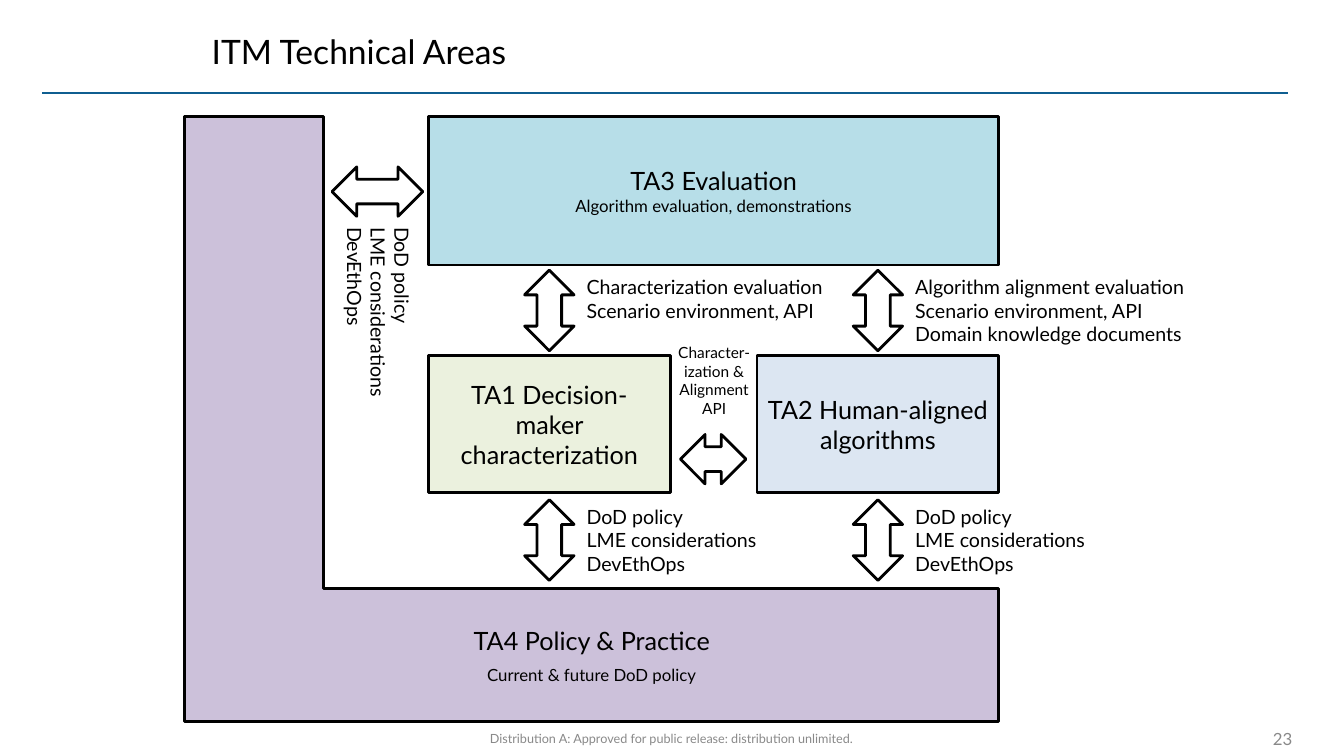
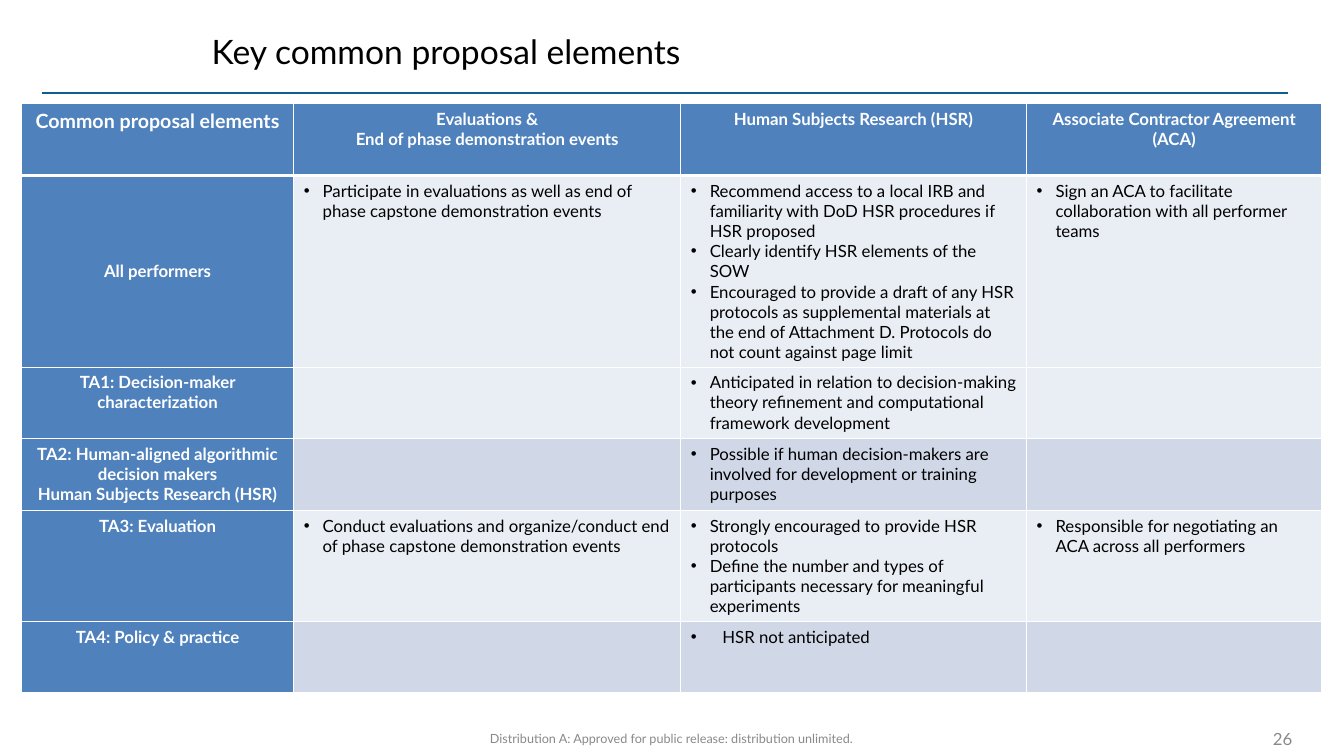
from lxml.etree import SubElement
from pptx import Presentation
from pptx.dml.color import RGBColor
from pptx.enum.shapes import MSO_CONNECTOR, MSO_SHAPE
from pptx.enum.text import MSO_ANCHOR, MSO_AUTO_SIZE, PP_ALIGN
from pptx.oxml.ns import qn
from pptx.util import Pt

BLACK = RGBColor(0x00, 0x00, 0x00)
WHITE = RGBColor(0xFF, 0xFF, 0xFF)
GREY = RGBColor(0x89, 0x89, 0x89)
RULE = RGBColor(0x0F, 0x5E, 0x90)
GREEN = RGBColor(0xEB, 0xF1, 0xDE)
PALE = RGBColor(0xDC, 0xE6, 0xF2)
AQUA = RGBColor(0xB7, 0xDE, 0xE8)
LILAC = RGBColor(0xCC, 0xC1, 0xDA)
HEAD = RGBColor(0x4F, 0x81, 0xBD)
LIGHT = RGBColor(0xE9, 0xED, 0xF4)
BAND = RGBColor(0xD0, 0xD8, 0xE8)

FONT = "Lato"
FOOTER = "Distribution A: Approved for public release: distribution unlimited."
POLICY = "DoD policy\nLME considerations\nDevEthOps"


def add_bullet(para, indent):
    props = para._p.get_or_add_pPr()
    props.set("marL", str(Pt(indent)))
    props.set("indent", str(-Pt(indent)))
    SubElement(props, qn("a:buFont")).set("typeface", "Arial")
    SubElement(props, qn("a:buChar")).set("char", "•")


def write(frame, text, size=14, color=BLACK, bold=False, align=PP_ALIGN.LEFT,
          rest=None, gap=0, bullet=0):
    """Fill a frame, one paragraph a line; rest and gap style the later lines."""
    for i, line in enumerate(text.split("\n")):
        para = frame.add_paragraph() if i else frame.paragraphs[0]
        para.alignment = align
        if i and gap:
            para.space_before = Pt(gap)
        if bullet:
            add_bullet(para, bullet)
        run = para.add_run()
        run.text = line
        font = run.font
        font.name = FONT
        font.size = Pt(rest if i and rest else size)
        font.bold = bold
        font.color.rgb = color


def add_borders(cell, base=1):
    props = cell._tc.get_or_add_tcPr()
    widths = {"a:lnL": 1, "a:lnR": 1, "a:lnT": 1, "a:lnB": base}
    for i, (tag, width) in enumerate(widths.items()):
        line = props.makeelement(qn(tag), {"w": str(Pt(width))})
        fill = SubElement(line, qn("a:solidFill"))
        SubElement(fill, qn("a:srgbClr")).set("val", str(WHITE))
        props.insert(i, line)


class Deck:
    """Holds the shared style and the current slide; lengths are in points."""

    def __init__(self):
        self.prs = Presentation()
        self.prs.slide_width, self.prs.slide_height = Pt(960), Pt(540)
        self.slide = None

    def start(self, title, number):
        self.slide = self.prs.slides.add_slide(self.prs.slide_layouts[5])
        head = self.slide.shapes.title
        head.left, head.top, head.width, head.height = map(Pt, (144, 12.2, 776, 48.2))
        head.text_frame.auto_size = MSO_AUTO_SIZE.NONE
        head.text_frame.vertical_anchor = MSO_ANCHOR.MIDDLE
        write(head.text_frame, title, size=24)
        self.rule(30.2, 920.2, 66.5)
        self.label((139.7, 515.5, 679.7, 23.8), FOOTER, anchor=MSO_ANCHOR.MIDDLE,
                   size=9, color=GREY, align=PP_ALIGN.CENTER)
        self.label((850.3, 516.2, 79.9, 23), str(number), anchor=MSO_ANCHOR.MIDDLE,
                   size=12, color=GREY, align=PP_ALIGN.RIGHT)

    def rule(self, left, right, top):
        line = self.slide.shapes.add_connector(
            MSO_CONNECTOR.STRAIGHT, Pt(left), Pt(top), Pt(right), Pt(top))
        line.line.color.rgb = RULE
        line.line.width = Pt(1.75)
        SubElement(line._element.spPr, qn("a:effectLst"))

    def label(self, place, text, turn=0, anchor=MSO_ANCHOR.TOP, **style):
        box = self.slide.shapes.add_textbox(*map(Pt, place))
        box.rotation = turn
        box.text_frame.word_wrap = True
        box.text_frame.vertical_anchor = anchor
        write(box.text_frame, text, **style)

    def shape(self, kind, place, fill=WHITE, text="", adjust=(), **style):
        shape = self.slide.shapes.add_shape(kind, *map(Pt, place))
        shape.shadow.inherit = False
        shape.fill.solid()
        shape.fill.fore_color.rgb = fill
        shape.line.color.rgb = BLACK
        shape.line.width = Pt(2)
        for i, value in enumerate(adjust):
            shape.adjustments[i] = value
        if text:
            shape.text_frame.word_wrap = True
            shape.text_frame.vertical_anchor = MSO_ANCHOR.MIDDLE
            write(shape.text_frame, text, size=18, align=PP_ALIGN.CENTER, **style)

    def table(self, left, top, widths, heights, rows, fills):
        """Draw a table whose first row and column are headings."""
        table = self.slide.shapes.add_table(
            len(rows), len(widths), Pt(left), Pt(top),
            Pt(sum(widths)), Pt(sum(heights))).table
        table.horz_banding = False
        for col, width in zip(table.columns, widths):
            col.width = Pt(width)
        for r, (row, height) in enumerate(zip(rows, heights)):
            table.rows[r].height = Pt(height)
            for c, text in enumerate(row):
                cell = table.cell(r, c)
                heading = r == 0 or c == 0
                cell.fill.solid()
                cell.fill.fore_color.rgb = HEAD if heading else fills[r]
                add_borders(cell, base=1 if r else 3)
                if heading:
                    write(cell.text_frame, text, size=12 if r or c else 14,
                          color=WHITE, bold=True, align=PP_ALIGN.CENTER)
                elif text:
                    last = r == len(rows) - 1
                    write(cell.text_frame, text, size=12, bullet=22.5 if last else 13.5)
        return table


def draw_areas(deck):
    deck.start("ITM Technical Areas", 23)
    wide, arrow, tall = 172.8, 35.3, 57.6
    areas = (
        (306, "TA1 Decision-maker characterization", GREEN,
         "Characterization evaluation\nScenario environment, API"),
        (540.7, "TA2 Human-aligned algorithms", PALE,
         "Algorithm alignment evaluation\nScenario environment, API\n"
         "Domain knowledge documents"),
    )
    deck.shape(MSO_SHAPE.CORNER, (131.8, 83.5, 581.7, 432), LILAC,
               "TA4 Policy & Practice\nCurrent & future DoD policy",
               adjust=(0.22, 0.23), rest=12, gap=6)
    deck.shape(MSO_SHAPE.RECTANGLE, (306, 83.5, 407.5, 105.8), AQUA,
               "TA3 Evaluation\nAlgorithm evaluation, demonstrations", rest=12)
    for left, name, fill, above in areas:
        deck.shape(MSO_SHAPE.RECTANGLE, (left, 254.2, wide, 97.9), fill, name)
        for top, note in ((193, above), (357, POLICY)):
            deck.shape(MSO_SHAPE.UP_DOWN_ARROW,
                       (left + (wide - arrow) / 2, top, arrow, tall))
            deck.label((left + 105.9, top, 227.5, 58.3), note)
    for left, top, width in ((237.2, 119.2, 64.8), (486, 310.3, 46.8)):
        deck.shape(MSO_SHAPE.LEFT_RIGHT_ARROW, (left, top, width, arrow))
    deck.label((475.9, 241.9, 68.4, 60.5), "Character-ization & Alignment API",
               size=11, align=PP_ALIGN.CENTER)
    deck.label((187.2, 192.2, 149, 74.9), POLICY, turn=90)


def draw_table(deck):
    deck.start("Key common proposal elements", 26)
    rows = (
        ("Common proposal elements",
         "Evaluations &\nEnd of phase demonstration events",
         "Human Subjects Research (HSR)",
         "Associate Contractor Agreement (ACA)"),
        ("All performers",
         "Participate in evaluations as well as end of phase capstone "
         "demonstration events",
         "Recommend access to a local IRB and familiarity with DoD HSR "
         "procedures if HSR proposed\n"
         "Clearly identify HSR elements of the SOW\n"
         "Encouraged to provide a draft of any HSR protocols as supplemental "
         "materials at the end of Attachment D. Protocols do not count "
         "against page limit",
         "Sign an ACA to facilitate collaboration with all performer teams"),
        ("TA1: Decision-maker characterization", "",
         "Anticipated in relation to decision-making theory refinement and "
         "computational framework development", ""),
        ("TA2: Human-aligned algorithmic decision makers\n"
         "Human Subjects Research (HSR)", "",
         "Possible if human decision-makers are involved for development or "
         "training purposes", ""),
        ("TA3: Evaluation",
         "Conduct evaluations and organize/conduct end of phase capstone "
         "demonstration events",
         "Strongly encouraged to provide HSR protocols\n"
         "Define the number and types of participants necessary for "
         "meaningful experiments",
         "Responsible for negotiating an ACA across all performers"),
        ("TA4: Policy & practice", "", "HSR not anticipated", ""),
    )
    table = deck.table(15.4, 74.2, (194.4, 276.5, 247, 211),
                       (51.2, 135.7, 51.2, 51.2, 79, 51.2), rows,
                       (HEAD, LIGHT, LIGHT, BAND, LIGHT, BAND))
    table.cell(1, 0).vertical_anchor = MSO_ANCHOR.MIDDLE


def main():
    deck = Deck()
    draw_areas(deck)
    draw_table(deck)
    deck.prs.save("out.pptx")


if __name__ == "__main__":
    main()
